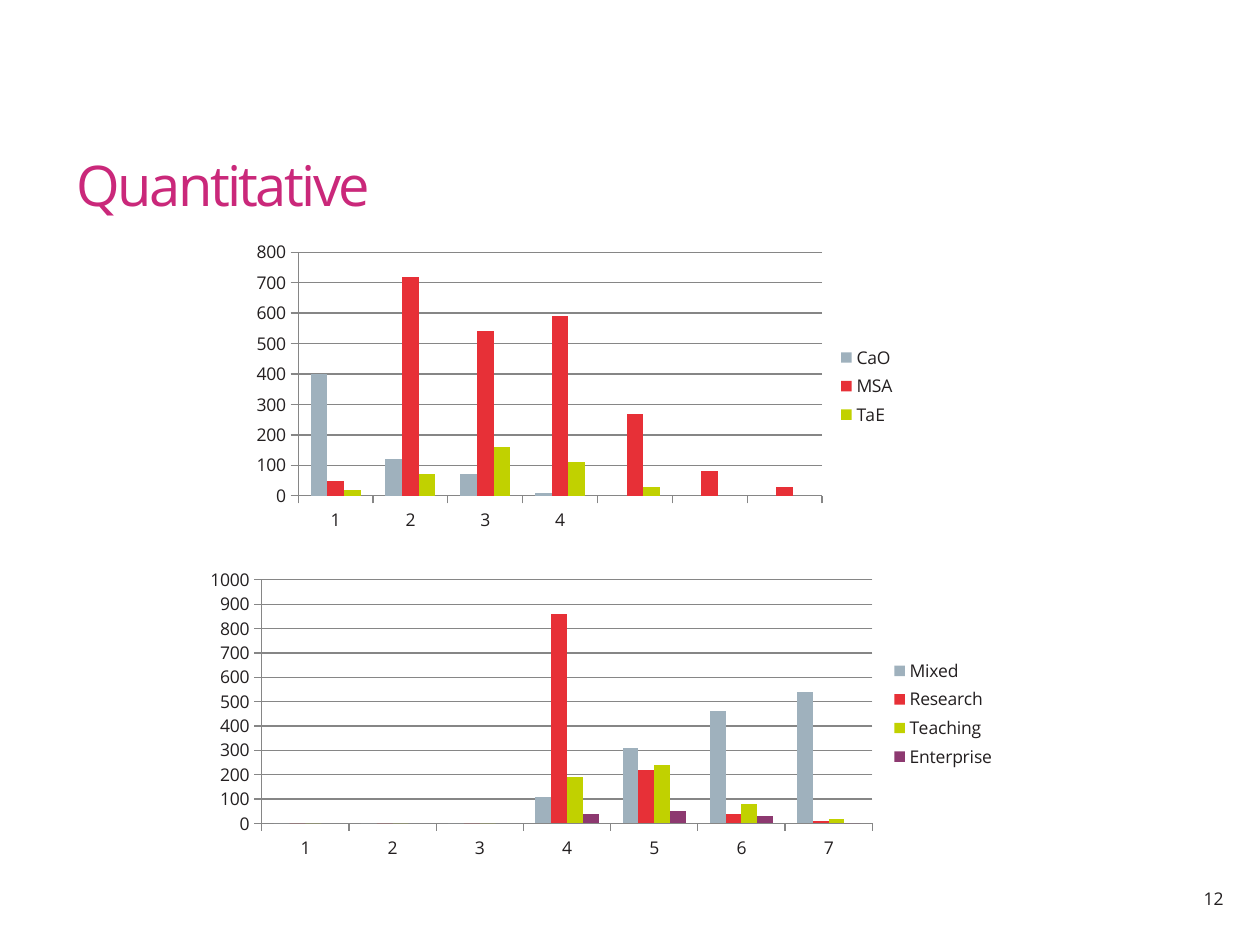
import pptx
import pptx.chart.data
import pptx.dml.color
import pptx.enum.chart
import pptx.enum.text
import pptx.util

Inches, Pt = pptx.util.Inches, pptx.util.Pt
RGB = pptx.dml.color.RGBColor.from_string
XL = pptx.enum.chart
ALIGN, ANCHOR = pptx.enum.text.PP_ALIGN, pptx.enum.text.MSO_ANCHOR

# Content
TITLE = "Quantitative"
PAGE_NUMBER = "12"
CHARTS = [
    {
        "box": (1.93, 1.86, 5.28, 2.41),
        "categories": ["1", "2", "3", "4", "", "", ""],
        "top": 800,
        "series": {
            "CaO": [400, 120, 70, 10, None, None, None],
            "MSA": [50, 720, 540, 590, 270, 80, 30],
            "TaE": [20, 70, 160, 110, 30, None, None],
        },
    },
    {
        "box": (1.54, 4.46, 6.46, 2.41),
        "categories": ["1", "2", "3", "4", "5", "6", "7"],
        "top": 1000,
        "series": {
            "Mixed": [0, 0, 0, 110, 310, 460, 540],
            "Research": [0, 0, 0, 860, 220, 40, 10],
            "Teaching": [0, 0, 0, 190, 240, 80, 20],
            "Enterprise": [None, None, None, 40, 50, 30, 0],
        },
    },
]

THEME = {
    "font": "Open Sans",
    "title": "CA287A",
    "text": "231F20",
    "axis": "868686",
    "series": ["9FB1BD", "E73037", "C1D100", "8D3970"],
    "title_size": 32,
    "text_size": 10,
}


def set_all(target, values):
    for name, value in values.items():
        setattr(target, name, value)


def style_font(font, size, color):
    set_all(font, {"name": THEME["font"], "size": Pt(size), "bold": False})
    font.color.rgb = RGB(color)


def place(shape, box):
    names = ("left", "top", "width", "height")
    set_all(shape, dict(zip(names, map(Inches, box))))


def write(shape, text, size, color, align, anchor):
    frame = shape.text_frame
    set_all(frame, {"word_wrap": True, "vertical_anchor": anchor,
                    "auto_size": pptx.enum.text.MSO_AUTO_SIZE.NONE})
    paragraph = frame.paragraphs[0]
    paragraph.alignment = align
    run = paragraph.add_run()
    run.text = text
    style_font(run.font, size, color)
    return run


def style_line(line):
    line.color.rgb = RGB(THEME["axis"])
    line.width = Pt(0.75)


def add_column_chart(slide, content):
    data = pptx.chart.data.CategoryChartData(number_format="General")
    data.categories = content["categories"]
    for name, values in content["series"].items():
        data.add_series(name, values)
    chart = slide.shapes.add_chart(
        XL.XL_CHART_TYPE.COLUMN_CLUSTERED, *map(Inches, content["box"]), data
    ).chart
    style_font(chart.font, THEME["text_size"], THEME["text"])
    set_all(chart, {"has_title": False, "has_legend": True})
    set_all(chart.legend, {"position": XL.XL_LEGEND_POSITION.RIGHT,
                           "include_in_layout": False})

    # Columns
    plot = chart.plots[0]
    set_all(plot, {"gap_width": 150, "overlap": 0, "vary_by_categories": False})
    for series, color in zip(plot.series, THEME["series"]):
        series.invert_if_negative = False
        series.format.fill.solid()
        series.format.fill.fore_color.rgb = RGB(color)

    # Axes and gridlines
    for axis in (chart.category_axis, chart.value_axis):
        axis.major_tick_mark = XL.XL_TICK_MARK.OUTSIDE
        style_line(axis.format.line)
    set_all(chart.value_axis, {"minimum_scale": 0, "maximum_scale": content["top"],
                               "major_unit": 100, "has_major_gridlines": True})
    style_line(chart.value_axis.major_gridlines.format.line)


def main():
    deck = pptx.Presentation()
    set_all(deck, {"slide_width": Inches(10), "slide_height": Inches(7.5)})
    slide = deck.slides.add_slide(deck.slide_layouts[5])

    # Title
    title = slide.shapes.title
    place(title, (0.51, 0.76, 8.98, 1.02))
    run = write(title, TITLE, THEME["title_size"], THEME["title"],
                ALIGN.LEFT, ANCHOR.BOTTOM)
    run.font._element.set("spc", "-150")

    # Charts
    for content in CHARTS:
        add_column_chart(slide, content)

    # Page number
    number = slide.shapes.add_textbox(*map(Inches, (9.02, 7, 0.79, 0.27)))
    write(number, PAGE_NUMBER, THEME["text_size"], THEME["text"],
          ALIGN.RIGHT, ANCHOR.TOP)

    deck.save("out.pptx")


if __name__ == "__main__":
    main()
